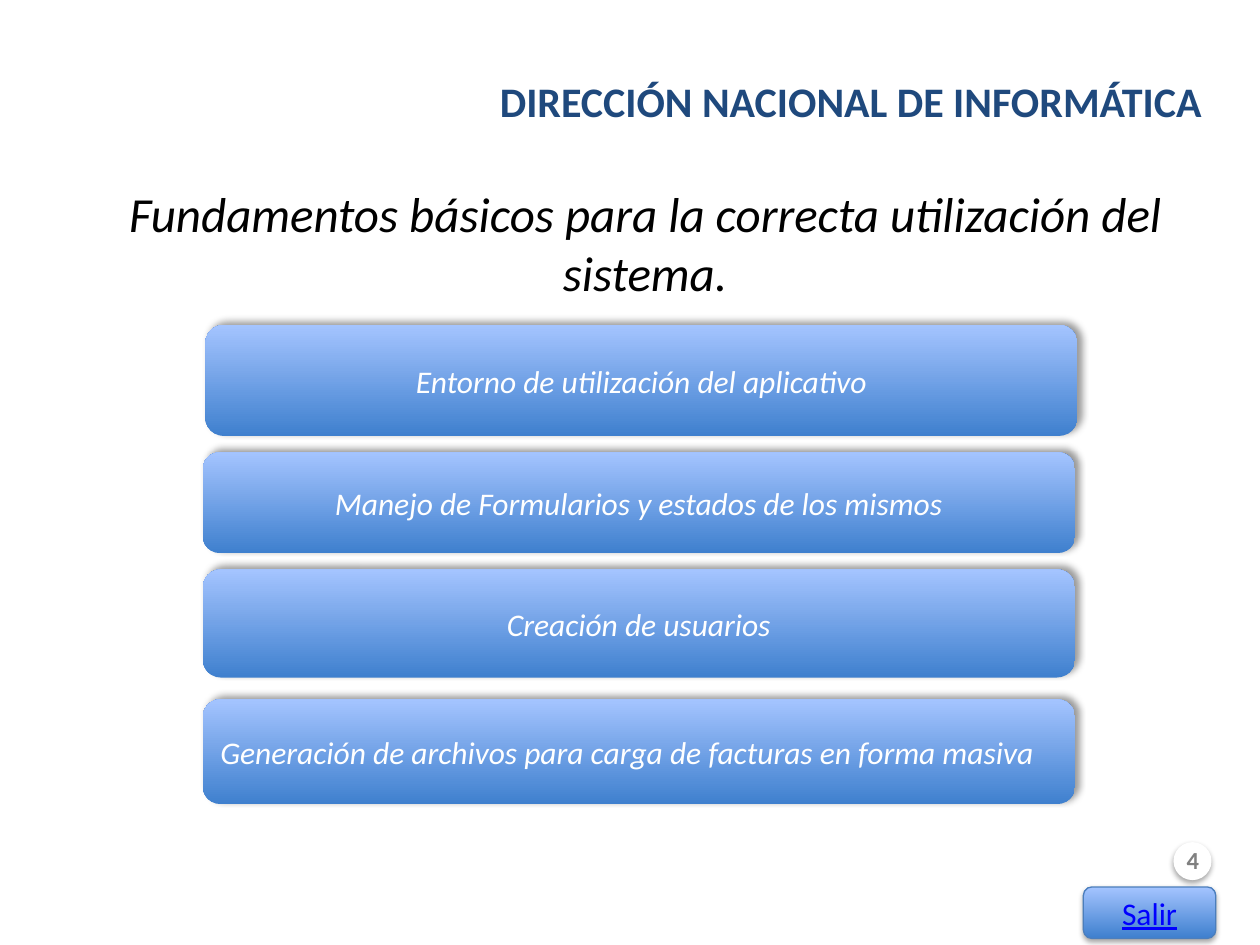
from lxml import etree
from pptx import Presentation
from pptx.dml.color import RGBColor
from pptx.enum.shapes import MSO_SHAPE as SHAPE
from pptx.enum.text import MSO_ANCHOR as ANCHOR, PP_ALIGN as ALIGN
from pptx.oxml.ns import qn
from pptx.util import Cm, Pt

FONT = "Calibri"
TITLE = "DIRECCIÓN NACIONAL DE INFORMÁTICA"
SUBTITLE = "Fundamentos básicos para la correcta utilización del sistema."
PAGE = "4"
EXIT = "Salir"

# text, left, top, height (cm), alignment
TOPICS = [
    ("Entorno de utilización del aplicativo", 4.14, 6.55, 2.24, ALIGN.CENTER),
    ("Manejo de Formularios y estados de los mismos", 4.09, 9.12, 2.03, ALIGN.CENTER),
    ("Creación de usuarios", 4.09, 11.48, 2.18, ALIGN.CENTER),
    ("Generación de archivos para carga de facturas en forma masiva",
     4.09, 14.1, 2.11, ALIGN.LEFT),
]
TOPIC_WIDTH = 17.58

# opacity %, blur pt, distance pt, direction degrees
TOPIC_SHADOW = (40, 4, 3, 315)
SMALL_SHADOW = (35, 3.15, 1.8, 90)
GRADIENT = ("3F80CE", "A4C4FF")


def rgb(value):
    return RGBColor.from_string(value)


def write(sp, text, size, color, align=ALIGN.CENTER, anchor=ANCHOR.MIDDLE, **style):
    tf = sp.text_frame
    tf.word_wrap = True
    tf.vertical_anchor = anchor
    tf.text = text
    p = tf.paragraphs[0]
    p.alignment = align
    font = p.runs[0].font
    font.name, font.size = FONT, Pt(size)
    font.color.rgb = rgb(color)
    for name, value in style.items():
        setattr(font, name, value)


def add_text(box, *args, **style):
    sp = slide.shapes.add_textbox(*map(Cm, box))
    write(sp, *args, **style)
    return sp


def add_shape(kind, box, shadow, line=None):
    sp = slide.shapes.add_shape(kind, *map(Cm, box))
    if line:
        sp.line.color.rgb = rgb(line)
        sp.line.width = Pt(0.75)
    else:
        sp.line.fill.background()
    set_shadow(sp, *shadow)
    return sp


def set_shadow(sp, opacity, blur, distance, direction):
    sp.shadow.inherit = False
    effects = sp.element.spPr.find(qn("a:effectLst"))
    outer = etree.SubElement(
        effects, qn("a:outerShdw"), blurRad=str(Pt(blur)), dist=str(Pt(distance)),
        dir=str(direction * 60000), rotWithShape="0")
    color = etree.SubElement(outer, qn("a:srgbClr"), val="000000")
    etree.SubElement(color, qn("a:alpha"), val=str(opacity * 1000))


def add_button(box, shadow, line=None):
    sp = add_shape(SHAPE.ROUNDED_RECTANGLE, box, shadow, line)
    sp.fill.gradient()
    sp.fill.gradient_angle = 90
    for stop, color in zip(sp.fill.gradient_stops, GRADIENT):
        stop.color.rgb = rgb(color)
    return sp


prs = Presentation()
prs.slide_width, prs.slide_height = Cm(25.4), Cm(19.05)
slide = prs.slides.add_slide(prs.slide_layouts[6])

badge = add_shape(SHAPE.OVAL, (23.67, 16.99, 0.74, 0.74), SMALL_SHADOW, "FFFFFF")
badge.fill.solid()
badge.fill.fore_color.rgb = rgb("FFFFFF")
number = add_text((23.67, 16.97, 0.64, 0.74), PAGE, 14, "808080", ALIGN.RIGHT, bold=True)
tf = number.text_frame
tf.margin_left = tf.margin_top = tf.margin_bottom = 0
tf.margin_right = Cm(0.14)

add_text((7.77, 1.4, 16.71, 1.27), TITLE, 24, "1F497D", ALIGN.RIGHT, ANCHOR.TOP, bold=True)
add_text((1.5, 3.58, 23.01, 3.84), SUBTITLE, 28, "000000", anchor=ANCHOR.TOP, italic=True)

for text, left, top, height, align in TOPICS:
    button = add_button((left, top, TOPIC_WIDTH, height), TOPIC_SHADOW)
    write(button, text, 18, "FFFFFF", align, italic=True)

exit_button = add_button((21.84, 17.88, 2.67, 1.04), SMALL_SHADOW, "4B7EBC")
write(exit_button, EXIT, 18, "0000FF", underline=True)

prs.save("out.pptx")
